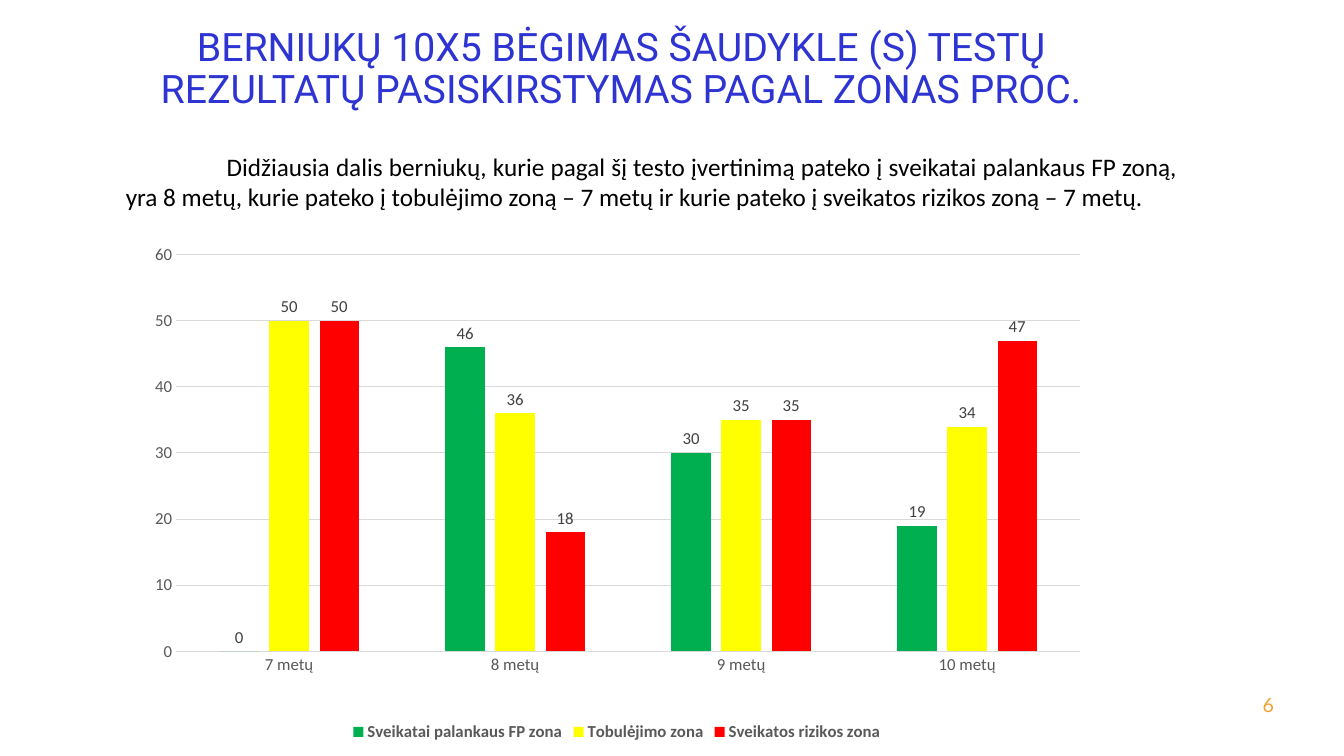
"""Build the slide on boys' 10x5 shuttle run results by zone."""
from lxml import etree
from pptx import Presentation
from pptx.chart.data import CategoryChartData
from pptx.dml.color import RGBColor
from pptx.enum.chart import XL_CHART_TYPE, XL_LABEL_POSITION, XL_LEGEND_POSITION, XL_TICK_MARK
from pptx.enum.text import MSO_ANCHOR, MSO_AUTO_SIZE, PP_ALIGN
from pptx.oxml.ns import qn
from pptx.util import Pt

COLUMNS = XL_CHART_TYPE.COLUMN_CLUSTERED
OUTSIDE_END = XL_LABEL_POSITION.OUTSIDE_END
BOTTOM = XL_LEGEND_POSITION.BOTTOM
NO_TICK = XL_TICK_MARK.NONE
TOP, MIDDLE = MSO_ANCHOR.TOP, MSO_ANCHOR.MIDDLE
CENTER, RIGHT, JUSTIFY = PP_ALIGN.CENTER, PP_ALIGN.RIGHT, PP_ALIGN.JUSTIFY
NO_AUTOFIT = MSO_AUTO_SIZE.NONE

COLORS = {
    "title": "2E34D1",
    "body": "000000",
    "number": "F0A334",
    "axis": "595959",
    "label": "404040",
    "grid": "D9D9D9",
    "healthy": "00B050",
    "improve": "FFFF00",
    "risk": "FF0000",
}


def format_font(font, name, size, color, bold=False):
    font.name = name
    font.size = Pt(size)
    font.bold = bold
    font.color.rgb = RGBColor.from_string(COLORS[color])


def write_text(shape, text, *, box, font, size, color, align, anchor=TOP, spacing=1.0, indent=0):
    shape.left, shape.top, shape.width, shape.height = (Pt(length) for length in box)
    frame = shape.text_frame
    frame.word_wrap = True
    frame.auto_size = NO_AUTOFIT
    frame.vertical_anchor = anchor
    paragraph = frame.paragraphs[0]
    paragraph.alignment = align
    paragraph.line_spacing = spacing
    if indent:
        paragraph._p.get_or_add_pPr().set("indent", str(Pt(indent)))
    run = paragraph.add_run()
    run.text = text
    format_font(run.font, font, size, color)


presentation = Presentation()
presentation.slide_width, presentation.slide_height = Pt(960), Pt(540)
slide = presentation.slides.add_slide(presentation.slide_layouts[5])

write_text(
    slide.shapes.title,
    "BERNIUKŲ 10X5 BĖGIMAS ŠAUDYKLE (S) TESTŲ REZULTATŲ PASISKIRSTYMAS PAGAL ZONAS PROC.",
    box=(103.7, 15.8, 679.7, 99.4), font="Roboto", size=28, color="title",
    align=CENTER, spacing=0.9,
)
write_text(
    slide.shapes.add_textbox(0, 0, 0, 0), "6",
    box=(879.8, 488.9, 37.4, 28.8), font="Lato", size=14, color="number",
    align=RIGHT, anchor=MIDDLE,
)

results = CategoryChartData()
results.categories = ["7 metų", "8 metų", "9 metų", "10 metų"]
zones = [
    ("Sveikatai palankaus FP zona", (0, 46, 30, 19), "healthy"),
    ("Tobulėjimo zona", (50, 36, 35, 34), "improve"),
    ("Sveikatos rizikos zona", (50, 18, 35, 47), "risk"),
]
for zone, percentages, color in zones:
    results.add_series(zone, percentages)
chart = slide.shapes.add_chart(
    COLUMNS, Pt(89.3), Pt(155.5), Pt(702.7), Pt(377.3), results
).chart
chart.has_title = False
format_font(chart.font, "Calibri", 10, "body")

columns = chart.plots[0]
columns.gap_width = 219
columns.overlap = -27
columns.vary_by_categories = False
for series, (zone, percentages, color) in zip(columns.series, zones):
    series.format.fill.solid()
    series.format.fill.fore_color.rgb = RGBColor.from_string(COLORS[color])
    series.invert_if_negative = False
    labels = series.data_labels
    labels.show_value = True
    labels.position = OUTSIDE_END
    format_font(labels.font, "Calibri", 12, "label")

ages, percent = chart.category_axis, chart.value_axis
for axis in (ages, percent):
    axis.major_tick_mark = axis.minor_tick_mark = NO_TICK
    format_font(axis.tick_labels.font, "Calibri", 12, "axis")
percent.minimum_scale, percent.maximum_scale, percent.major_unit = 0, 60, 10
percent.format.line.fill.background()
for line in (ages.format.line, percent.major_gridlines.format.line):
    line.color.rgb = RGBColor.from_string(COLORS["grid"])
    line.width = Pt(0.75)

chart.has_legend = True
chart.legend.position = BOTTOM
chart.legend.include_in_layout = False
format_font(chart.legend.font, "Calibri", 12, "axis", bold=True)

plot_area = chart._chartSpace.chart.plotArea
for old_layout in plot_area.findall(qn("c:layout")):
    plot_area.remove(old_layout)
layout = etree.Element(qn("c:layout"))
plot_area.insert(0, layout)
manual = etree.SubElement(layout, qn("c:manualLayout"))
placement = [
    ("layoutTarget", "inner"), ("xMode", "edge"), ("yMode", "edge"),
    ("x", "0.052"), ("y", "0.07"), ("w", "0.919"), ("h", "0.751"),
]
for tag, value in placement:
    etree.SubElement(manual, qn(f"c:{tag}")).set("val", value)

write_text(
    slide.shapes.add_textbox(0, 0, 0, 0),
    "Didžiausia dalis berniukų, kurie pagal šį testo įvertinimą pateko į sveikatai palankaus "
    "FP zoną, yra 8 metų, kurie pateko į tobulėjimo zoną – 7 metų ir kurie pateko į sveikatos "
    "rizikos zoną – 7 metų.",
    box=(82.8, 104.4, 765.4, 51.1), font="Calibri", size=18, color="body",
    align=JUSTIFY, indent=72,
)

presentation.save("out.pptx")
